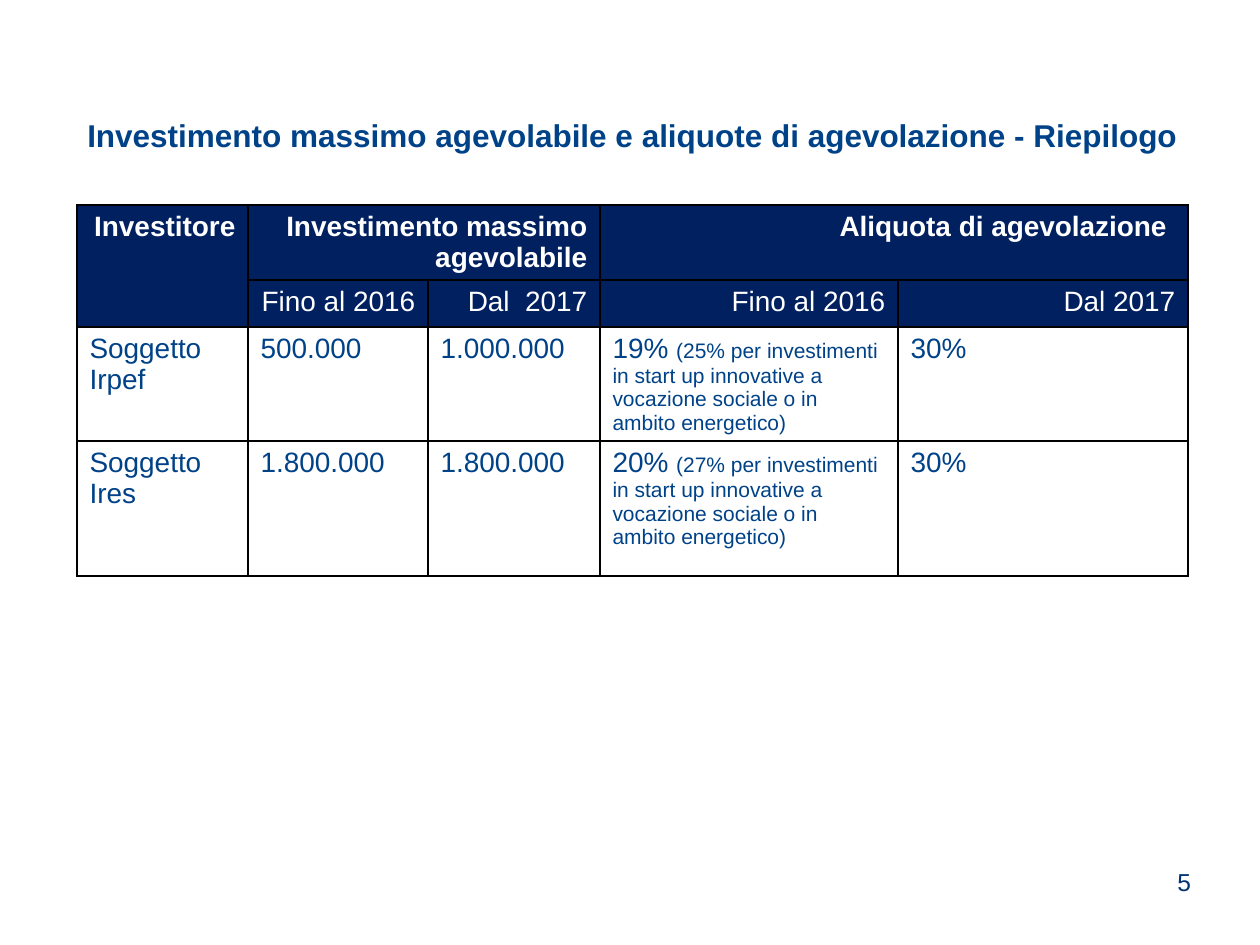
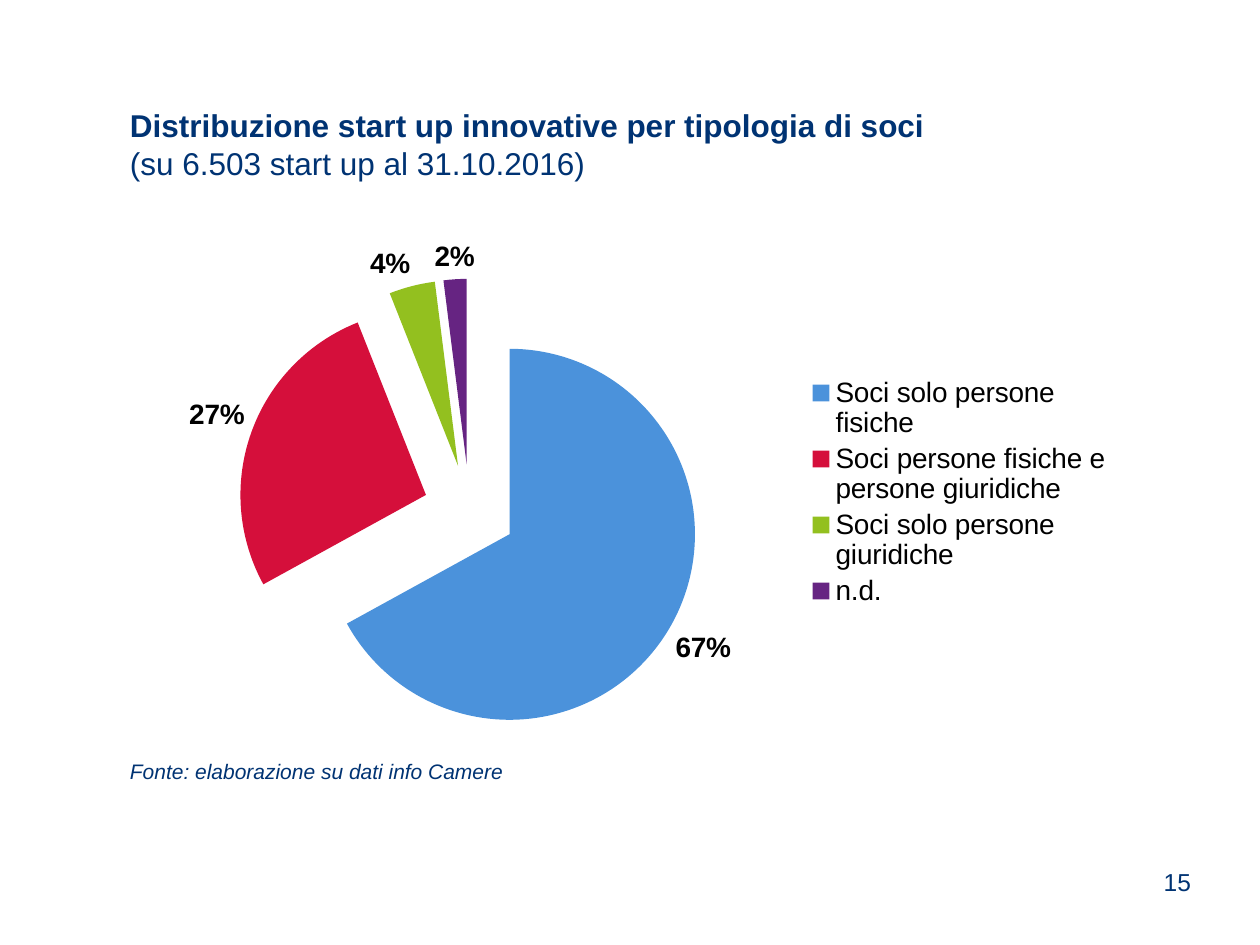
from pptx import Presentation
from pptx.chart.data import CategoryChartData
from pptx.dml.color import RGBColor
from pptx.enum.chart import XL_CHART_TYPE, XL_LABEL_POSITION, XL_LEGEND_POSITION
from pptx.enum.text import MSO_ANCHOR, PP_ALIGN
from pptx.oxml.xmlchemy import OxmlElement
from pptx.oxml.ns import qn
from pptx.util import Emu, Pt

FACE = "Arial"
NAVY, BLUE, DEEP = "002060", "004288", "003373"
WHITE, BLACK = "FFFFFF", "000000"
WIDTHS = [171, 180, 172, 298, 290]
HEIGHTS = [73, 47, 103, 135]
HEAD = [
    ["Investitore", "Investimento massimo agevolabile", "", "Aliquota di agevolazione", ""],
    ["", "Fino al 2016", "Dal  2017", "Fino al 2016", "Dal 2017"],
]
NOTE = "({} per investimenti in start up innovative a vocazione sociale o in ambito energetico)"
BODY = [
    ["Soggetto Irpef", "500.000", "1.000.000", ("19% ", NOTE.format("25%")), "30%"],
    ["Soggetto Ires", "1.800.000", "1.800.000", ("20% ", NOTE.format("27%")), "30%"],
]
SHARES = [
    ("Soci solo persone fisiche", 0.67, "4B92DB"),
    ("Soci persone fisiche e persone giuridiche", 0.27, "D50F3B"),
    ("Soci solo persone giuridiche", 0.04, "93C01F"),
    ("n.d.", 0.02, "662482"),
]


def px(count):
    """Turn px into EMU."""
    return Emu(round(count * 914400 / 126))


def tint(code):
    """Turn a hex string into a colour."""
    return RGBColor.from_string(code)


def style(font, size, color, bold=False, italic=False):
    """Set every trait of a font."""
    font.name, font.size = FACE, Pt(size)
    font.bold, font.italic = bold, italic
    font.color.rgb = tint(color)


def label(slide, box, lines, size, color, align=PP_ALIGN.LEFT, inset=0, italic=False):
    """Write (text, bold) lines in a text box."""
    frame = slide.shapes.add_textbox(*map(px, box)).text_frame
    frame.word_wrap = True
    frame.margin_left = frame.margin_right = px(inset)
    frame.margin_top = frame.margin_bottom = px(inset)
    for spot, (text, bold) in enumerate(lines):
        line = frame.add_paragraph() if spot else frame.paragraphs[0]
        line.text, line.alignment = text, align
        style(line.font, size, color, bold, italic)


def number(slide, count):
    """Write the page number at the bottom right."""
    label(slide, (903, 861, 294, 40), [(str(count), False)], 14, DEEP, PP_ALIGN.RIGHT, 6)


def border(cell):
    """Draw a thin black line on each side of a cell."""
    props = cell._tc.get_or_add_tcPr()
    for side in ("L", "R", "T", "B"):
        line, fill, color = map(OxmlElement, (f"a:ln{side}", "a:solidFill", "a:srgbClr"))
        line.set("w", str(Pt(1)))
        color.set("val", BLACK)
        fill.append(color)
        line.append(fill)
        props.append(line)


def fill(cell, text, head, bold):
    """Style one cell and write its text, with any note in small type."""
    border(cell)
    cell.fill.solid()
    cell.fill.fore_color.rgb = tint(NAVY if head else WHITE)
    cell.vertical_anchor = MSO_ANCHOR.TOP
    line = cell.text_frame.paragraphs[0]
    line.alignment = PP_ALIGN.RIGHT if head else PP_ALIGN.LEFT
    if isinstance(text, tuple):
        for part, size in zip(text, (16, 12)):
            run = line.add_run()
            run.text = part
            style(run.font, size, BLUE)
    else:
        line.text = text
        style(line.font, 16, WHITE if head else BLUE, bold)


def grid(slide, box):
    """Build the table of limits and rates."""
    rows = HEAD + BODY
    table = slide.shapes.add_table(len(rows), len(WIDTHS), *map(px, box)).table
    table.first_row = table.horz_banding = False
    for col, width in zip(table.columns, WIDTHS):
        col.width = px(width)
    for row, height in zip(table.rows, HEIGHTS):
        row.height = px(height)
    for top, texts in enumerate(rows):
        for left, text in enumerate(texts):
            fill(table.cell(top, left), text, top < len(HEAD), top == 0)
    table.cell(0, 0).merge(table.cell(1, 0))
    for left in (1, 3):
        table.cell(0, left).merge(table.cell(0, left + 1))
    table.cell(0, 3).margin_right = px(21)


def pie(slide, box):
    """Build the exploded pie of member types."""
    names, values, colors = zip(*SHARES)
    data = CategoryChartData(number_format="0%")
    data.categories = names
    data.add_series("Series 1", values)
    chart = slide.shapes.add_chart(XL_CHART_TYPE.PIE, *map(px, box), data).chart
    chart.has_title = False
    style(chart.font, 10, BLACK)
    chart.has_legend = True
    chart.legend.position = XL_LEGEND_POSITION.RIGHT
    chart.legend.include_in_layout = False
    style(chart.legend.font, 16, BLACK)
    plot = chart.plots[0]
    plot.vary_by_categories = True
    series = plot.series[0]
    burst = OxmlElement("c:explosion")
    burst.set("val", "25")
    series._element.find(qn("c:tx")).addnext(burst)
    for spot, color in enumerate(colors):
        face = series.points[spot].format.fill
        face.solid()
        face.fore_color.rgb = tint(color)
    labels = series.data_labels
    labels.show_value = True
    labels.show_percentage = False
    labels.number_format, labels.number_format_is_linked = "0%", False
    labels.position = XL_LABEL_POSITION.OUTSIDE_END
    style(labels.font, 16, BLACK, True)


def limits(slide):
    """Lay out the summary of limits and rates."""
    grid(slide, (77, 205, sum(WIDTHS), sum(HEIGHTS)))
    title = "Investimento massimo agevolabile e aliquote di agevolazione - Riepilogo"
    label(slide, (67, 116, 1131, 38), [(title, True)], 18, BLUE, PP_ALIGN.CENTER)
    number(slide, 5)


def members(slide):
    """Lay out the split of start-ups by member type."""
    title = [
        ("Distribuzione start up innovative per tipologia di soci", True),
        ("(su 6.503 start up al 31.10.2016)", False),
    ]
    label(slide, (130, 106, 997, 77), title, 18, DEEP)
    pie(slide, (126, 224, 999, 536))
    source = [("Fonte: elaborazione su dati info Camere", False)]
    label(slide, (130, 759, 1022, 25), source, 12, DEEP, italic=True)
    number(slide, 15)


def main():
    """Build and save the deck."""
    deck = Presentation()
    deck.slide_width, deck.slide_height = px(1260), px(945)
    for build in (limits, members):
        build(deck.slides.add_slide(deck.slide_layouts[6]))
    deck.save("out.pptx")


if __name__ == "__main__":
    main()
